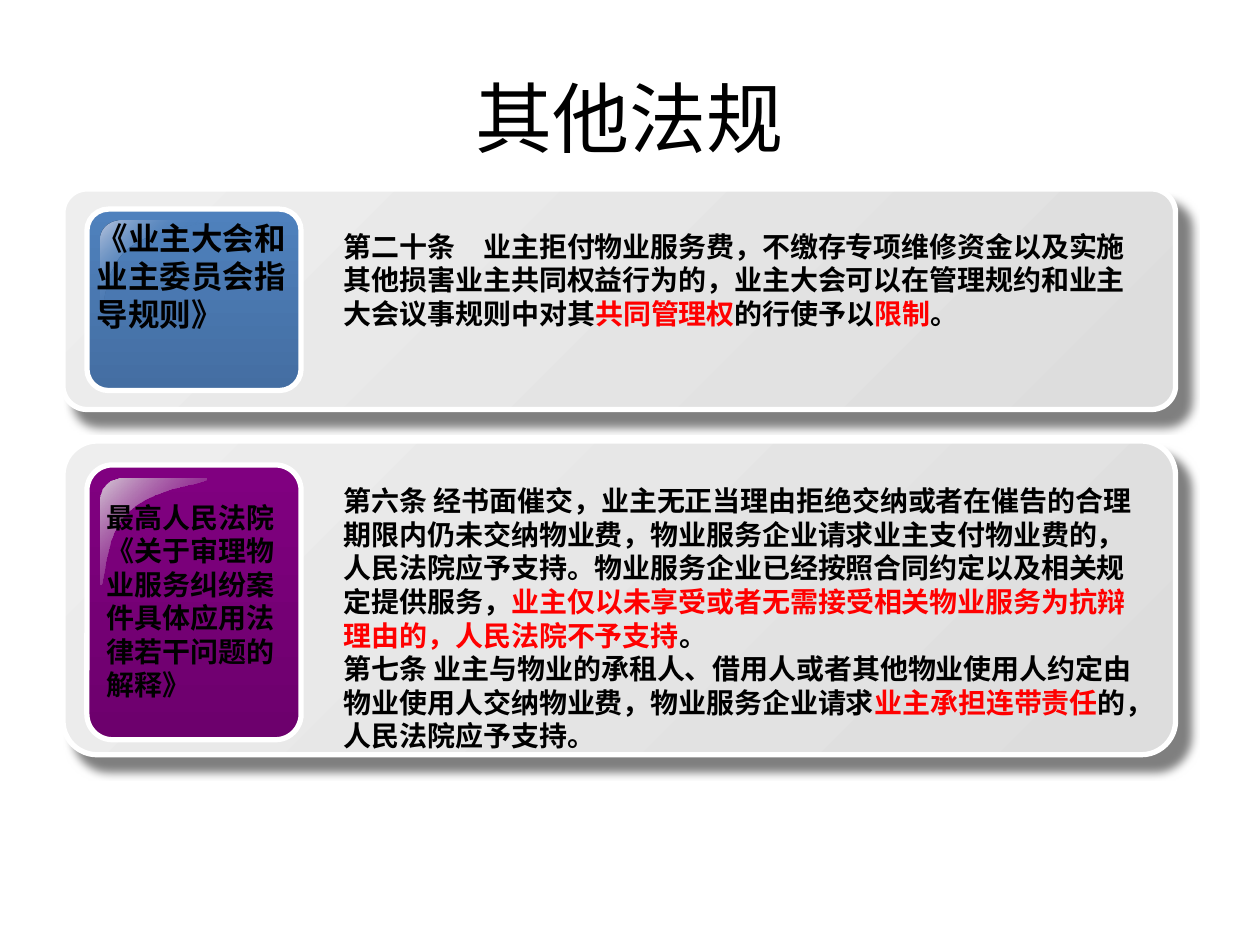
from lxml.etree import SubElement
from pptx import Presentation
from pptx.dml.color import RGBColor
from pptx.enum.shapes import MSO_SHAPE
from pptx.enum.text import MSO_ANCHOR, PP_ALIGN
from pptx.oxml.ns import qn
from pptx.util import Pt

COLORS = {
    "black": "000000", "red": "FF0000", "white": "FFFFFF",
    "panel": "EEEEEE", "panel_end": "DDDDDD",
    "blue": "4F81BD", "blue_end": "446EA2", "blue_gloss": "BBC7DE",
    "purple": "800080", "purple_end": "6D006D", "purple_gloss": "D5C9D5",
}
FONT = "Times New Roman"


def set_gradient(sp, angle, stops):
    sp.shadow.inherit = False
    sp.fill.gradient()
    sp.fill.gradient_angle = 360 - angle
    gs_list = next(sp._element.spPr.iter(qn("a:gsLst")))
    for gs in list(gs_list):
        gs_list.remove(gs)
    for position, color, alpha in stops:
        gs = SubElement(gs_list, qn("a:gs"), pos=str(position * 1000))
        clr = SubElement(gs, qn("a:srgbClr"), val=COLORS[color])
        if alpha < 100:
            SubElement(clr, qn("a:alpha"), val=str(alpha * 1000))


def add_text(shapes, box, size, runs, bold=True):
    sp = shapes.add_textbox(*[Pt(v) for v in box])
    tf = sp.text_frame
    tf.word_wrap = True
    p = tf.paragraphs[0]
    for text, color in runs:
        for i, line in enumerate(text.split("\n")):
            if i:
                p.add_line_break()
            r = p.add_run()
            r.text = line
            r.font.name = FONT
            r.font.size = Pt(size)
            r.font.bold = bold
            r.font.color.rgb = RGBColor.from_string(COLORS[color])
    return tf


prs = Presentation()
prs.slide_width, prs.slide_height = Pt(720), Pt(540)
s = prs.slides.add_slide(prs.slide_layouts[6])

tf = add_text(s.shapes, (36, 21.6, 648, 90), 44, [("其他法规", "black")], bold=False)
tf.vertical_anchor = MSO_ANCHOR.MIDDLE
tf.paragraphs[0].alignment = PP_ALIGN.CENTER

sections = [
    {
        "panel": (36, 108, 635.8, 126), "badge": (49.7, 119.5, 122.4, 103.7),
        "color": "blue", "gloss": (57.6, 126, 61.2, 51.8),
        "gloss_stops": [(0, "blue_gloss", 100), (50, "blue", 0), (100, "blue_gloss", 100)],
        "label": (48.2, 121.7, 126, 85), "label_size": 18,
        "name": "《业主大会和业主委员会指导规则》",
        "body": (189.4, 127.4, 467.3, 65.5),
        "runs": [
            ("第二十条　业主拒付物业服务费，不缴存专项维修资金以及实施其他损害业主共同权益行为的，"
             "业主大会可以在管理规约和业主大会议事规则中对其", "black"),
            ("共同管理权", "red"), ("的行使予以", "black"), ("限制", "red"), ("。", "black"),
        ],
    },
    {
        "panel": (36, 252, 635.8, 179.3), "badge": (49.7, 265.7, 122.4, 157),
        "color": "purple", "gloss": (57.6, 273.6, 61.2, 61.2),
        "gloss_stops": [(0, "purple_gloss", 100), (100, "purple", 0)],
        "label": (54, 282.2, 113.8, 123.8), "label_size": 16,
        "name": "最高人民法院《关于审理物业服务纠纷案件具体应用法律若干问题的解释》",
        "body": (189.4, 272.9, 467.3, 162.7),
        "runs": [
            ("第六条 经书面催交，业主无正当理由拒绝交纳或者在催告的合理期限内仍未交纳物业费，"
             "物业服务企业请求业主支付物业费的，人民法院应予支持。"
             "物业服务企业已经按照合同约定以及相关规定提供服务，", "black"),
            ("业主仅以未享受或者无需接受相关物业服务为抗辩理由的，人民法院不予支持", "red"),
            ("。\n第七条 业主与物业的承租人、借用人或者其他物业使用人约定由物业使用人交纳物业费，"
             "物业服务企业请求", "black"),
            ("业主承担连带责任", "red"), ("的，人民法院应予支持。", "black"),
        ],
    },
]

gloss_curves = [
    [(0.2, 0), (0.08, 0), (0, 0.1), (0, 0.2)],
    [(0, 0.99), (0.05, 1), (0.02, 0.52), (0.27, 0.3)],
    [(0.27, 0.3), (0.52, 0.07), (1, 0.06), (0.99, 0)],
]
STEPS = 12
gloss_points = []
for curve in gloss_curves:
    for i in range(STEPS + 1):
        t = i / STEPS
        weights = ((1 - t) ** 3, 3 * t * (1 - t) ** 2, 3 * t * t * (1 - t), t ** 3)
        gloss_points.append([sum(w * c[axis] for w, c in zip(weights, curve)) for axis in (0, 1)])

for section in sections:
    shapes = s.shapes.add_group_shape().shapes
    color = section["color"]
    for part, radius, angle, start, end in (
        ("panel", 0.109, 45, "panel", "panel_end"),
        ("badge", 0.119, 90, color, color + "_end"),
    ):
        sp = shapes.add_shape(MSO_SHAPE.ROUNDED_RECTANGLE, *[Pt(v) for v in section[part]])
        sp.adjustments[0] = radius
        set_gradient(sp, angle, [(0, start, 100), (100, end, 100)])
        sp.line.color.rgb = RGBColor.from_string(COLORS["white"])
        sp.line.width = Pt(3)
        if part == "panel":
            effects = sp._element.spPr.find(qn("a:effectLst"))
            shadow = SubElement(effects, qn("a:outerShdw"), blurRad=str(Pt(5)),
                                dist=str(Pt(10.6)), dir=str(49 * 60000),
                                algn="ctr", rotWithShape="0")
            clr = SubElement(shadow, qn("a:srgbClr"), val=COLORS["black"])
            SubElement(clr, qn("a:alpha"), val="50000")

    left, top, width, height = section["gloss"]
    points = [(Pt(left + x * width), Pt(top + y * height)) for x, y in gloss_points]
    builder = shapes.build_freeform(*points[0])
    builder.add_line_segments(points[1:], close=True)
    sp = builder.convert_to_shape()
    set_gradient(sp, 45, section["gloss_stops"])
    sp.line.fill.background()

    add_text(shapes, section["label"], section["label_size"], [(section["name"], "black")])
    add_text(shapes, section["body"], 16, section["runs"])

prs.save("out.pptx")
